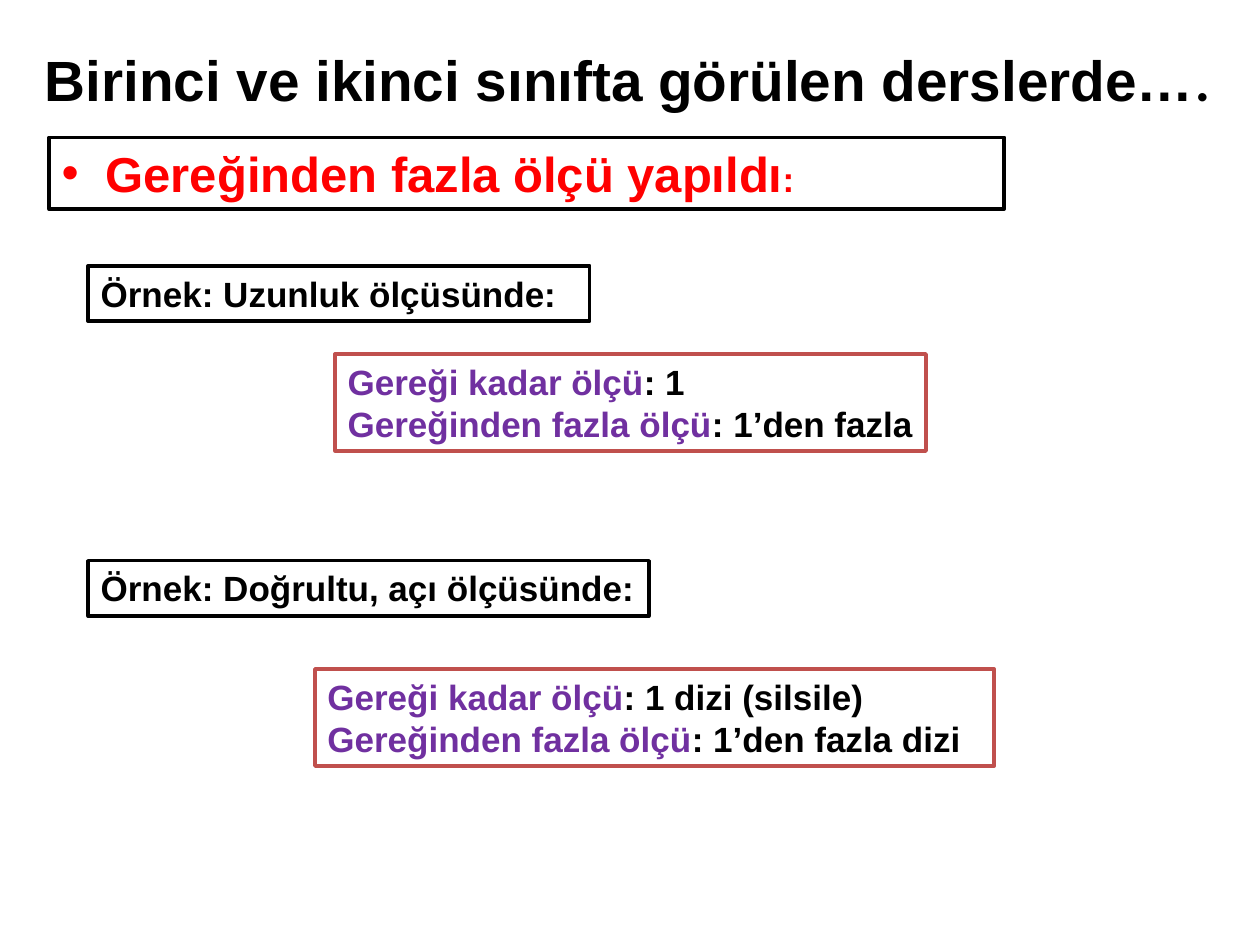
from dataclasses import dataclass

from lxml.etree import SubElement
from pptx import Presentation
from pptx.dml.color import RGBColor
from pptx.enum.shapes import MSO_SHAPE
from pptx.enum.text import MSO_ANCHOR, PP_ALIGN
from pptx.oxml.ns import qn
from pptx.util import Inches, Pt

COLS, ROWS = 100, 75
WIDTH, HEIGHT = Inches(10), Inches(7.5)


@dataclass(frozen=True)
class Theme:
    font: str = "Arial"
    mark_font: str = "Calibri"
    black: str = "000000"
    white: str = "FFFFFF"
    red: str = "FF0000"
    purple: str = "7030A0"
    frame: str = "C0504D"
    title: float = 32.4
    heading: float = 28
    body: float = 20
    border: float = 2


THEME = Theme()


def place(box):
    """Turn a box in grid columns and rows into slide lengths."""
    x, y, w, h = box
    col, row = WIDTH / COLS, HEIGHT / ROWS
    return int(x * col), int(y * row), int(w * col), int(h * row)


def add_run(p, text, color, size, name=THEME.font):
    r = p.add_run()
    r.text = text
    values = {"name": name, "size": Pt(size), "bold": True}
    for key, value in values.items():
        setattr(r.font, key, value)
    r.font.color.rgb = RGBColor.from_string(color)


def add_frame(s, box, border):
    """Add a white rectangle with a border and return its text frame."""
    sp = s.shapes.add_shape(MSO_SHAPE.RECTANGLE, *place(box))
    sp.shadow.inherit = False
    sp.fill.solid()
    sp.fill.fore_color.rgb = RGBColor.from_string(THEME.white)
    sp.line.color.rgb = RGBColor.from_string(border)
    sp.line.width = Pt(THEME.border)
    tf = sp.text_frame
    tf.word_wrap = True
    tf.vertical_anchor = MSO_ANCHOR.TOP
    tf.paragraphs[0].alignment = PP_ALIGN.LEFT
    return tf


def add_bullet(p, indent):
    pPr = p._p.get_or_add_pPr()
    pPr.set("marL", str(indent))
    pPr.set("indent", str(-indent))
    SubElement(pPr, qn("a:buFont")).set("typeface", THEME.font)
    SubElement(pPr, qn("a:buChar")).set("char", "•")


def add_title(s, box):
    tf = s.shapes.add_textbox(*place(box)).text_frame
    values = {"word_wrap": True, "vertical_anchor": MSO_ANCHOR.MIDDLE,
              "margin_left": Inches(0.05), "margin_right": Inches(0.05)}
    for key, value in values.items():
        setattr(tf, key, value)
    p = tf.paragraphs[0]
    p.alignment = PP_ALIGN.CENTER
    add_run(p, "Birinci ve ikinci sınıfta görülen derslerde…",
            THEME.black, THEME.title)
    add_run(p, ".", THEME.black, THEME.title, THEME.mark_font)


def add_heading(s, box):
    p = add_frame(s, box, THEME.black).paragraphs[0]
    add_bullet(p, Inches(0.35))
    add_run(p, "Gereğinden fazla ölçü yapıldı", THEME.red, THEME.heading)
    add_run(p, ":", THEME.red, THEME.body)


def add_example(s, box, label, label_width, answer_box, answers):
    """Add a label at the box corner; answer_box is offset from that corner."""
    x, y = box
    tf = add_frame(s, (x, y, label_width, 4.4), THEME.black)
    add_run(tf.paragraphs[0], f"Örnek: {label}:", THEME.black, THEME.body)

    dx, dy, width = answer_box
    tf = add_frame(s, (x + dx, y + dy, width, 7.7), THEME.frame)
    terms = ("Gereği kadar ölçü", "Gereğinden fazla ölçü")
    for i, (term, answer) in enumerate(zip(terms, answers)):
        p = tf.add_paragraph() if i else tf.paragraphs[0]
        p.alignment = PP_ALIGN.LEFT
        add_run(p, term, THEME.purple, THEME.body)
        add_run(p, f": {answer}", THEME.black, THEME.body)


def main():
    prs = Presentation()
    prs.slide_width, prs.slide_height = WIDTH, HEIGHT
    s = prs.slides.add_slide(prs.slide_layouts[6])
    add_title(s, (2.3, 0, 95, 12.5))
    add_heading(s, (3.9, 10.9, 75.8, 5.7))
    add_example(s, (7, 21.1), "Uzunluk ölçüsünde", 39.8,
                (19.6, 7, 46.9), ("1", "1’den fazla"))
    add_example(s, (7, 44.5), "Doğrultu, açı ölçüsünde", 44.5,
                (18, 8.6, 53.9), ("1 dizi (silsile)", "1’den fazla dizi"))
    prs.save("out.pptx")


if __name__ == "__main__":
    main()
